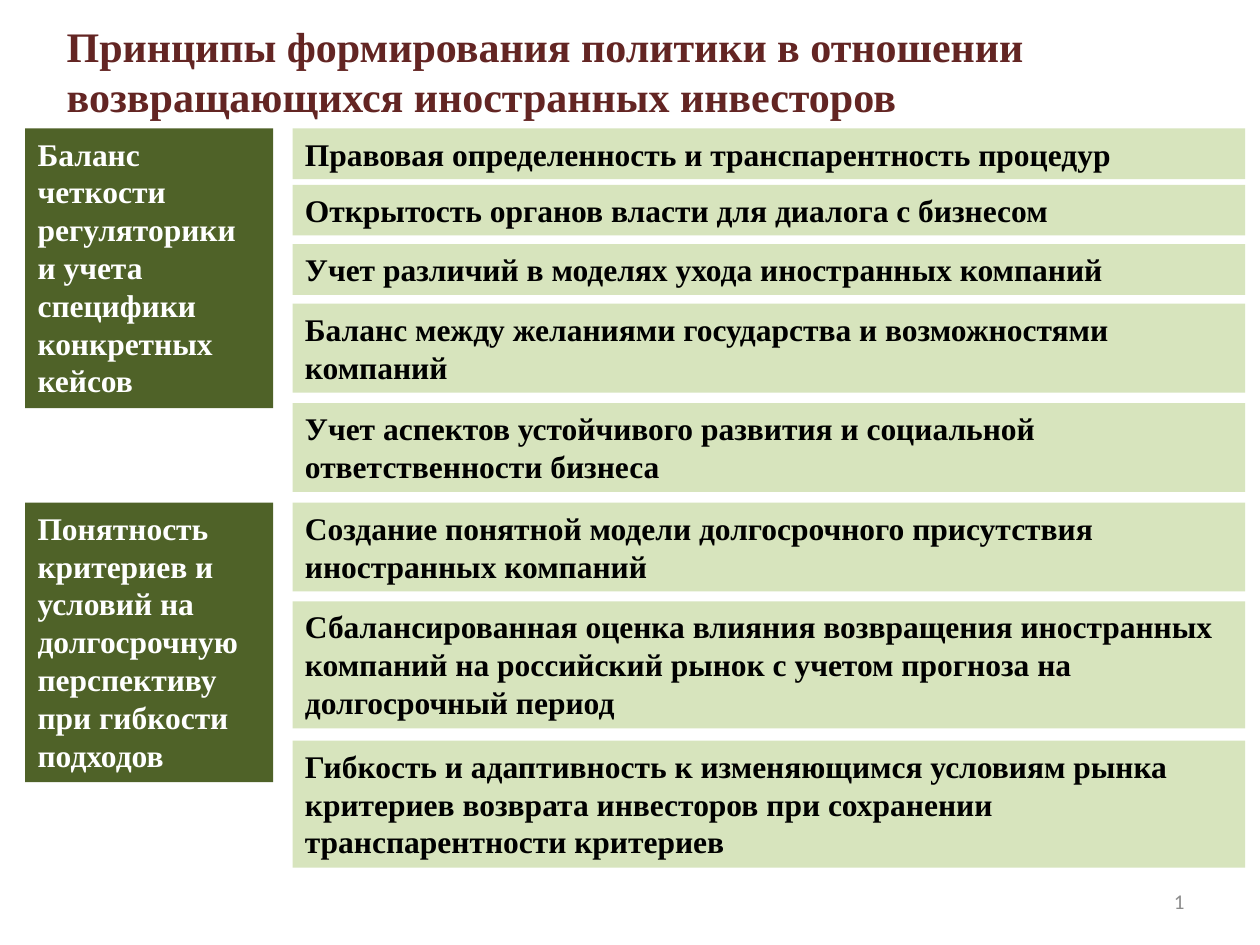
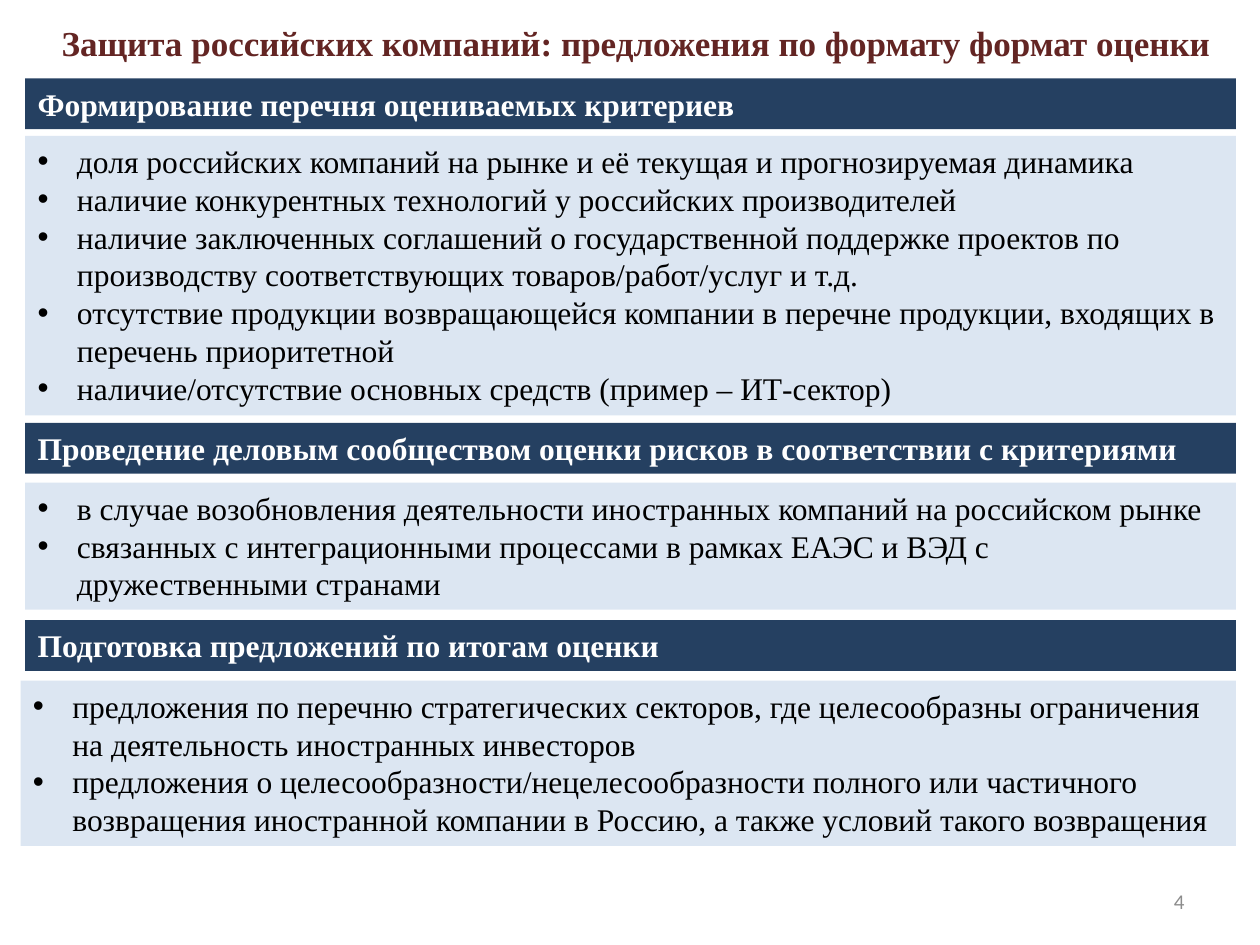
from lxml import etree
from pptx import Presentation
from pptx.dml.color import RGBColor
from pptx.enum.shapes import MSO_SHAPE as Shape
from pptx.enum.text import MSO_ANCHOR as Anchor, MSO_AUTO_SIZE as AutoSize, PP_ALIGN as Align
from pptx.oxml.ns import qn
from pptx.util import Pt

# Content: (text or list of bullets, top, number of lines)
PRINCIPLES_TITLE = "Принципы формирования политики в отношении возвращающихся иностранных инвесторов"
GOALS = [
    ("Баланс четкости регуляторики и учета специфики конкретных кейсов", 73.4, 7),
    ("Понятность критериев и условий на долгосрочную перспективу при гибкости подходов", 287.2, 7),
]
PRINCIPLES = [
    ("Правовая определенность и транспарентность процедур", 73.4, 1),
    ("Открытость органов власти для диалога с бизнесом", 105.6, 1),
    ("Учет различий в моделях ухода иностранных компаний", 139.5, 1),
    ("Баланс между желаниями государства и возможностями компаний", 173.6, 2),
    ("Учет аспектов устойчивого развития и социальной ответственности бизнеса", 230.4, 2),
    ("Создание понятной модели долгосрочного присутствия иностранных компаний", 287.2, 2),
    ("Сбалансированная оценка влияния возвращения иностранных компаний "
     "на российский рынок с учетом прогноза на долгосрочный период", 343.6, 3),
    ("Гибкость и адаптивность к изменяющимся условиям рынка критериев возврата "
     "инвесторов при сохранении транспарентности критериев", 423.2, 3),
]

ASSESSMENT_TITLE = "Защита российских компаний: предложения по формату формат оценки"
STAGES = [
    ("Формирование перечня оцениваемых критериев", 44.8, 1),
    ("Проведение деловым сообществом оценки рисков в соответствии с критериями", 241.7, 1),
    ("Подготовка предложений по итогам оценки", 354.4, 1),
]
STAGE_DETAILS = [
    (["доля российских компаний на рынке и её текущая и прогнозируемая динамика",
      "наличие конкурентных технологий у российских производителей",
      "наличие заключенных соглашений о государственной поддержке проектов "
      "по производству соответствующих товаров/работ/услуг и т.д.",
      "отсутствие продукции возвращающейся компании в перечне продукции, "
      "входящих в перечень приоритетной",
      "наличие/отсутствие основных средств (пример – ИТ-сектор)"], 77.6, 7),
    (["в случае возобновления деятельности иностранных компаний на российском рынке",
      "связанных с интеграционными процессами в рамках ЕАЭС и ВЭД с дружественными странами"],
     275.8, 3),
    (["предложения по перечню стратегических секторов, где целесообразны ограничения "
      "на деятельность иностранных инвесторов",
      "предложения о целесообразности/нецелесообразности полного или частичного возвращения "
      "иностранной компании в Россию, а также условий такого возвращения"], 389, 4),
]

# Shared style
SERIF, SANS = "Times New Roman", "Calibri"
MAROON, GREY, BLACK, WHITE = "632523", "8C8C8C", "000000", "FFFFFF"
DARK_GREEN, LIGHT_GREEN = "4F6228", "D7E4BD"
NAVY, PALE_BLUE = "254061", "DCE6F2"
LINE_HEIGHT, INSETS = 21.8, 7.2
MARGIN, RIGHT_EDGE = 14.4, 706.3
BULLET_INDENT = 22.5


def color(hex_code):
    return RGBColor.from_string(hex_code)


def add_bullet(paragraph):
    props = paragraph._p.get_or_add_pPr()
    props.set("marL", str(Pt(BULLET_INDENT)))
    props.set("indent", str(-Pt(BULLET_INDENT)))
    etree.SubElement(props, qn("a:buFont")).set("typeface", "Arial")
    etree.SubElement(props, qn("a:buChar")).set("char", "•")


def write(box, text, size=18, font=SERIF, ink=BLACK, bold=False,
          align=Align.LEFT, anchor=Anchor.TOP, grow=True):
    """Fill a box with one string, or with a list of bullets."""
    frame = box.text_frame
    frame.word_wrap = True
    frame.vertical_anchor = anchor
    frame.auto_size = AutoSize.SHAPE_TO_FIT_TEXT if grow else AutoSize.NONE
    bulleted = isinstance(text, list)
    for i, line in enumerate(text if bulleted else [text]):
        paragraph = frame.add_paragraph() if i else frame.paragraphs[0]
        paragraph.alignment = align
        if bulleted:
            add_bullet(paragraph)
        run = paragraph.add_run()
        run.text = line
        run.font.size, run.font.name, run.font.bold = Pt(size), font, bold
        run.font.color.rgb = color(ink)


def add_text(slide, text, left, top, width, height, **style):
    write(slide.shapes.add_textbox(Pt(left), Pt(top), Pt(width), Pt(height)), text, **style)


def add_panel(slide, text, left, top, width, lines, fill, **style):
    height = INSETS + LINE_HEIGHT * lines
    panel = slide.shapes.add_shape(Shape.RECTANGLE, Pt(left), Pt(top), Pt(width), Pt(height))
    panel.shadow.inherit = False
    panel.fill.solid()
    panel.fill.fore_color.rgb = color(fill)
    panel.line.fill.background()
    write(panel, text, **style)


def add_slide(deck, title, number, title_box, title_size):
    slide = deck.slides.add_slide(deck.slide_layouts[6])
    add_text(slide, title, *title_box, size=title_size, ink=MAROON, bold=True)
    add_text(slide, number, 516, 500.5, 168, 28.8, size=12, font=SANS, ink=GREY,
             align=Align.RIGHT, anchor=Anchor.MIDDLE, grow=False)
    return slide


def main():
    deck = Presentation()
    deck.slide_width, deck.slide_height = Pt(720), Pt(540)

    # Principles: goals on the left, principles on the right
    slide = add_slide(deck, PRINCIPLES_TITLE, "1", (31, 8, 646.6, 65.4), 24)
    for text, top, lines in GOALS:
        add_panel(slide, text, MARGIN, top, 141.8, lines, DARK_GREEN, ink=WHITE, bold=True)
    for text, top, lines in PRINCIPLES:
        add_panel(slide, text, 167.2, top, 544.3, lines, LIGHT_GREEN, bold=True)

    # Assessment: a heading band above each list
    slide = add_slide(deck, ASSESSMENT_TITLE, "4", (28.1, 8.6, 691.9, 31.5), 20)
    for text, top, lines in STAGES:
        add_panel(slide, text, MARGIN, top, RIGHT_EDGE - MARGIN, lines, NAVY,
                  ink=WHITE, bold=True)
    for (bullets, top, lines), left in zip(STAGE_DETAILS, (MARGIN, MARGIN, 11.8)):
        add_panel(slide, bullets, left, top, RIGHT_EDGE - left, lines, PALE_BLUE)

    deck.save("out.pptx")


if __name__ == "__main__":
    main()
